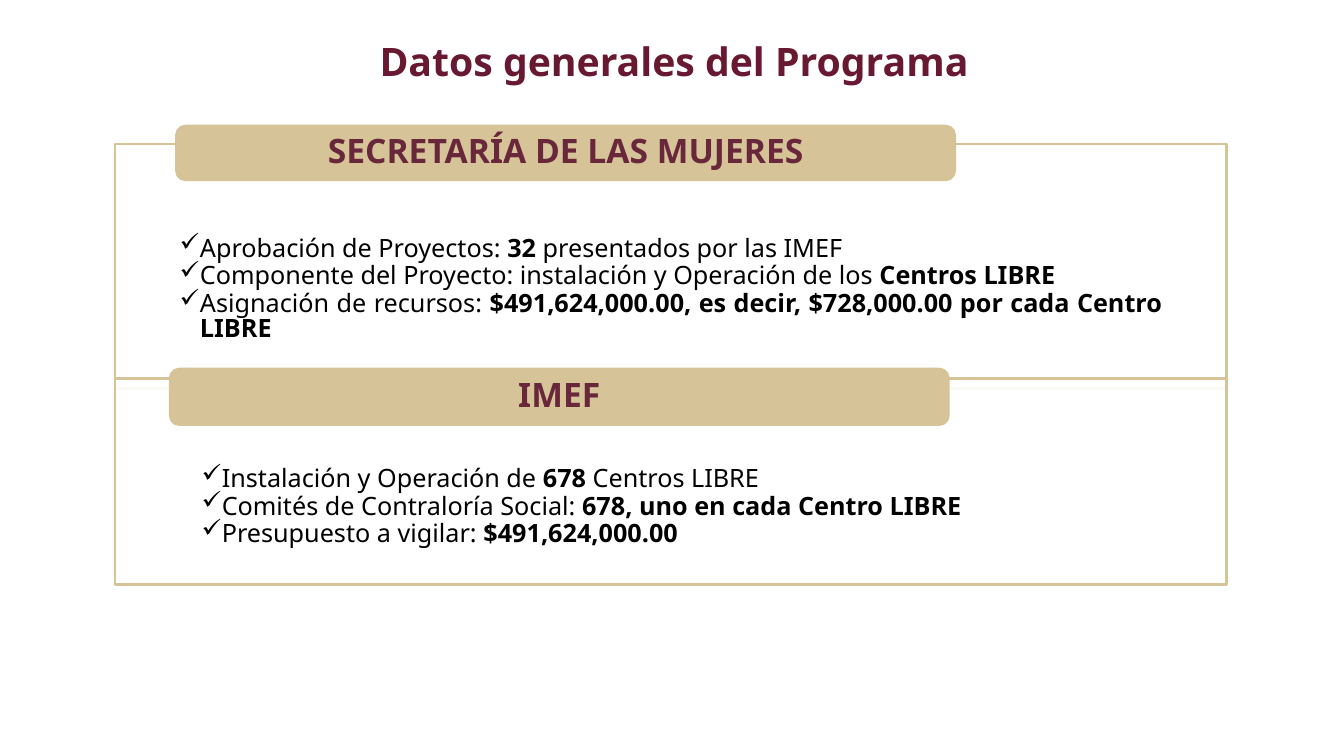
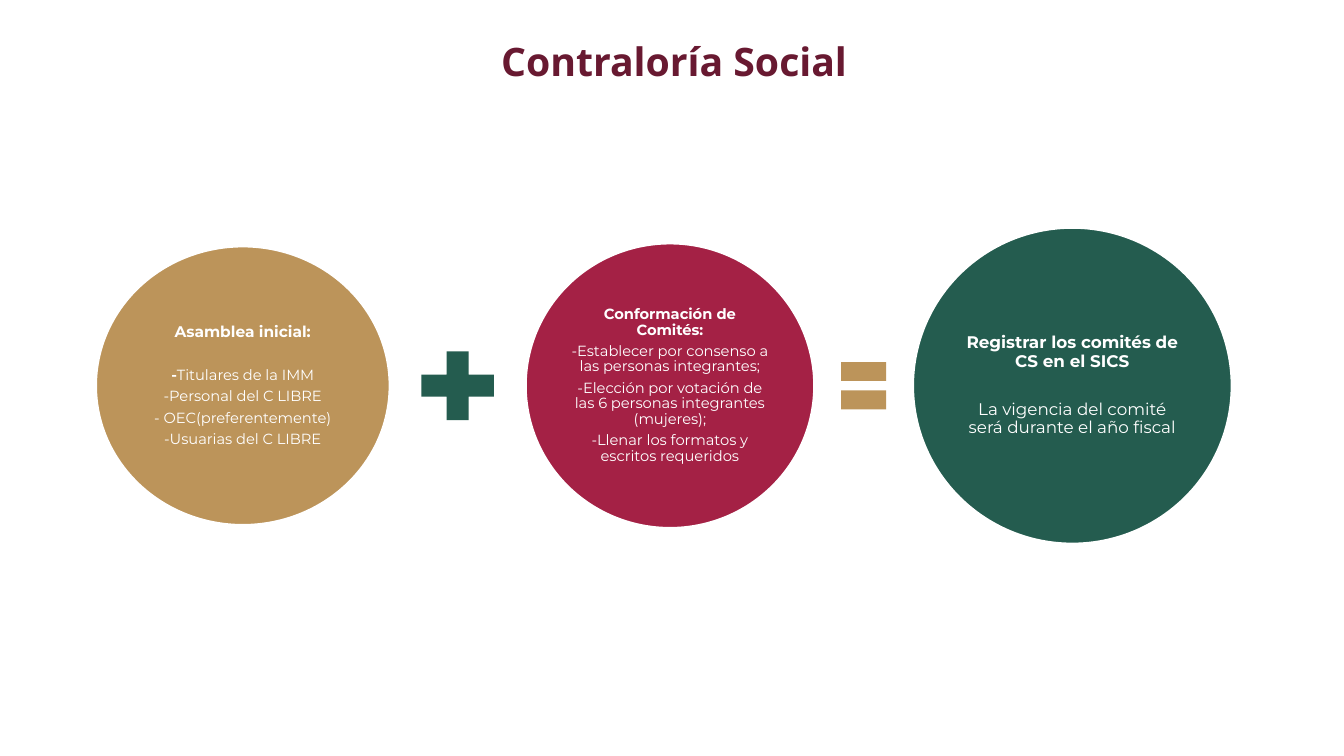
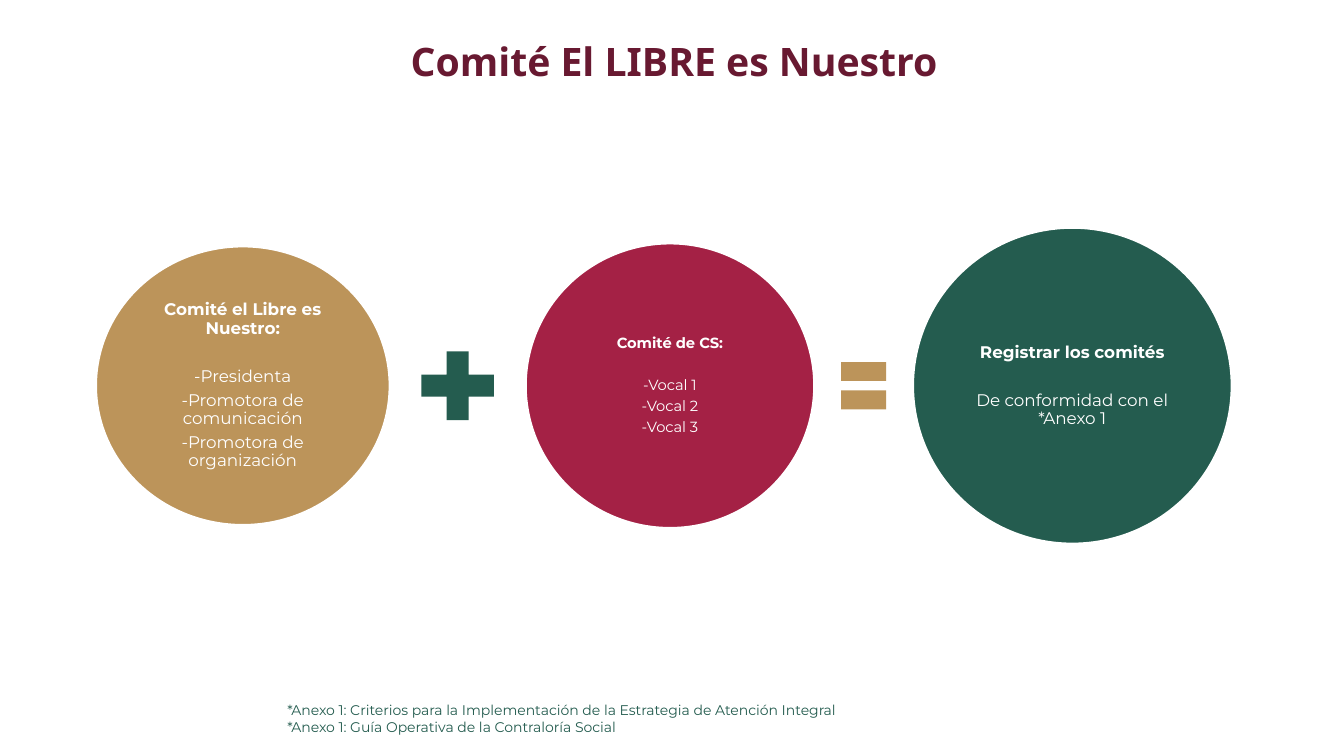
from lxml.etree import SubElement
from pptx import Presentation
from pptx.dml.color import RGBColor
from pptx.enum.shapes import MSO_SHAPE as Shape
from pptx.enum.text import MSO_ANCHOR as Anchor, MSO_AUTO_SIZE as AutoSize, PP_ALIGN as Align
from pptx.oxml.ns import qn
from pptx.util import Cm, Pt

WHITE = RGBColor(0xFF, 0xFF, 0xFF)
BLACK = RGBColor(0x00, 0x00, 0x00)
SAND = RGBColor(0xD6, 0xC4, 0x98)
GOLD = RGBColor(0xBC, 0x94, 0x5A)
CRIMSON = RGBColor(0xA4, 0x21, 0x45)
GREEN = RGBColor(0x24, 0x5C, 0x4F)
WINE = RGBColor(0x68, 0x19, 0x31)
PLUM = RGBColor(0x68, 0x27, 0x3A)
HEADING_FONT = "Noto Sans"
BODY_FONT = "Montserrat"
TITLE_ONLY = 5


def write(frame, text, size=18, font=HEADING_FONT, color=BLACK, bold=False,
          align=Align.CENTER, spacing=None, after=0, bullet=None):
    para = frame.add_paragraph() if frame.text else frame.paragraphs[0]
    para.alignment = align
    para.line_spacing = spacing
    para.space_after = Pt(after)
    if bullet:
        props = para._p.get_or_add_pPr()
        props.set("marL", str(Cm(0.51)))
        props.set("indent", str(-Cm(0.51)))
        bullet_color = SubElement(props, qn("a:buClr"))
        SubElement(bullet_color, qn("a:srgbClr"), val=str(color))
        SubElement(props, qn("a:buChar"), char=bullet)
    for index, part in enumerate(text.split("|")):
        if part:
            span = para.add_run()
            span.text = part
            span.font.size = Pt(size)
            span.font.name = font
            span.font.color.rgb = color
            span.font.bold = bold or index % 2 == 1


def draw(page, kind, left, top, width, height, fill, line=None, inset=0.05):
    shape = page.shapes.add_shape(kind, Cm(left), Cm(top), Cm(width), Cm(height))
    shape.shadow.inherit = False
    shape.fill.solid()
    shape.fill.fore_color.rgb = fill
    if line is None:
        shape.line.fill.background()
    else:
        shape.line.color.rgb = line
        shape.line.width = Pt(2)
    frame = shape.text_frame
    frame.word_wrap = True
    frame.vertical_anchor = Anchor.MIDDLE
    frame.margin_left = frame.margin_right = Cm(inset)
    frame.margin_top = frame.margin_bottom = Cm(0.05)
    return shape


deck = Presentation()
deck.slide_width = Cm(33.87)
deck.slide_height = Cm(19.05)

pages = []
for heading in ["Datos generales del Programa", "Contraloría Social", "Comité El LIBRE es Nuestro"]:
    page = deck.slides.add_slide(deck.slide_layouts[TITLE_ONLY])
    title = page.shapes.title
    title.left, title.top, title.width, title.height = Cm(6.99), Cm(0.61), Cm(19.99), Cm(1.83)
    title.text_frame.auto_size = AutoSize.NONE
    title.text_frame.vertical_anchor = Anchor.MIDDLE
    write(title.text_frame, heading, size=28, color=WINE, bold=True)
    pages.append(page)
program_page, oversight_page, committee_page = pages

sections = [
    ("SECRETARÍA DE LAS MUJERES", 3.63, 6.17, 1.63, 2.36, (4.45, 3.18, 1.35), [
        "Aprobación de Proyectos: |32| presentados por las IMEF",
        "Componente del Proyecto: instalación y Operación de los |Centros LIBRE",
        "Asignación de recursos: |$491,624,000.00, es decir, $728,000.00 por cada Centro LIBRE",
    ]),
    ("IMEF", 9.53, 5.21, 2.18, 2.26, (4.29, 9.3, 1.4), [
        "Instalación y Operación de |678| Centros LIBRE",
        "Comités de Contraloría Social: |678, uno en cada Centro LIBRE",
        "Presupuesto a vigilar: |$491,624,000.00",
    ]),
]
for name, top, height, inset, text_top, (band_left, band_top, band_height), items in sections:
    box = draw(program_page, Shape.RECTANGLE, 2.9, top, 28.02, height, WHITE, SAND, inset)
    fill_color = box._element.spPr.find(qn("a:solidFill"))[0]
    SubElement(fill_color, qn("a:alpha"), val="90000")
    box.text_frame.vertical_anchor = Anchor.TOP
    box.text_frame.margin_top = Cm(text_top)
    for item in items:
        write(box.text_frame, item, align=Align.JUSTIFY, spacing=0.81, after=2.3, bullet="✓")
    band = draw(program_page, Shape.ROUNDED_RECTANGLE, band_left, band_top, 19.61, band_height,
                SAND, SAND, 0.74)
    write(band.text_frame, name, size=24, color=PLUM, bold=True, spacing=0.9)

ROW_LEFT, ROW_MIDDLE, ROW_GAP = 2.41, 9.72, 0.46
equation = [
    (Shape.OVAL, 7.42, 7.04, GOLD),
    (Shape.MATH_PLUS, 2.49, 2.36, GREEN),
    (Shape.OVAL, 7.29, 7.19, CRIMSON),
    (Shape.MATH_EQUAL, 1.55, 2.03, GOLD),
    (Shape.OVAL, 8.05, 7.98, GREEN),
]
WIDE_GAP, NARROW_GAP = 1.78, 0.35
oversight_circles = [
    ("Asamblea inicial:", 11, 10.5, WIDE_GAP, [
        "|-|Titulares de la IMM", "-Personal del C LIBRE",
        "- OEC(preferentemente)", "-Usuarias del C LIBRE"]),
    ("Conformación de Comités:", 10.5, 10.5, NARROW_GAP, [
        "-Establecer por consenso a las personas integrantes;",
        "-Elección por votación de las 6 personas integrantes (mujeres);",
        "-Llenar los formatos y escritos requeridos"]),
    ("Registrar los comités de CS en el SICS", 12, 12, WIDE_GAP, [
        "La vigencia del comité será durante el año fiscal"]),
]
committee_circles = [
    ("Comité el Libre es Nuestro:", 12, 12, WIDE_GAP, [
        "-Presidenta", "-Promotora de comunicación", "-Promotora de organización"]),
    ("Comité de CS:", 10.5, 10.5, WIDE_GAP, ["-Vocal 1", "-Vocal 2", "-Vocal 3"]),
    ("Registrar los comités", 12, 12, WIDE_GAP, ["De conformidad con el *Anexo 1"]),
]
for page, circles in [(oversight_page, oversight_circles), (committee_page, committee_circles)]:
    left = ROW_LEFT
    remaining = iter(circles)
    for kind, width, height, color in equation:
        is_circle = kind == Shape.OVAL
        shape = draw(page, kind, left, ROW_MIDDLE - height / 2, width, height, color,
                     WHITE if is_circle else None)
        left += width + ROW_GAP
        if is_circle:
            heading, heading_size, size, gap, items = next(remaining)
            write(shape.text_frame, heading, size=heading_size, font=BODY_FONT, color=WHITE,
                  bold=True, spacing=0.9, after=round(heading_size * gap, 1))
            for item in items:
                write(shape.text_frame, item, size=size, font=BODY_FONT, color=WHITE,
                      spacing=0.9, after=round(size * NARROW_GAP, 1))

footnote = committee_page.shapes.add_textbox(Cm(6.99), Cm(17.55), Cm(25.96), Cm(1.12))
footnote.text_frame.word_wrap = True
for note in ["*Anexo 1: Criterios para la Implementación de la Estrategia de Atención Integral",
             "*Anexo 1: Guía Operativa de la Contraloría Social"]:
    write(footnote.text_frame, note, size=10, font=BODY_FONT, color=GREEN, align=Align.JUSTIFY)

deck.save("out.pptx")
